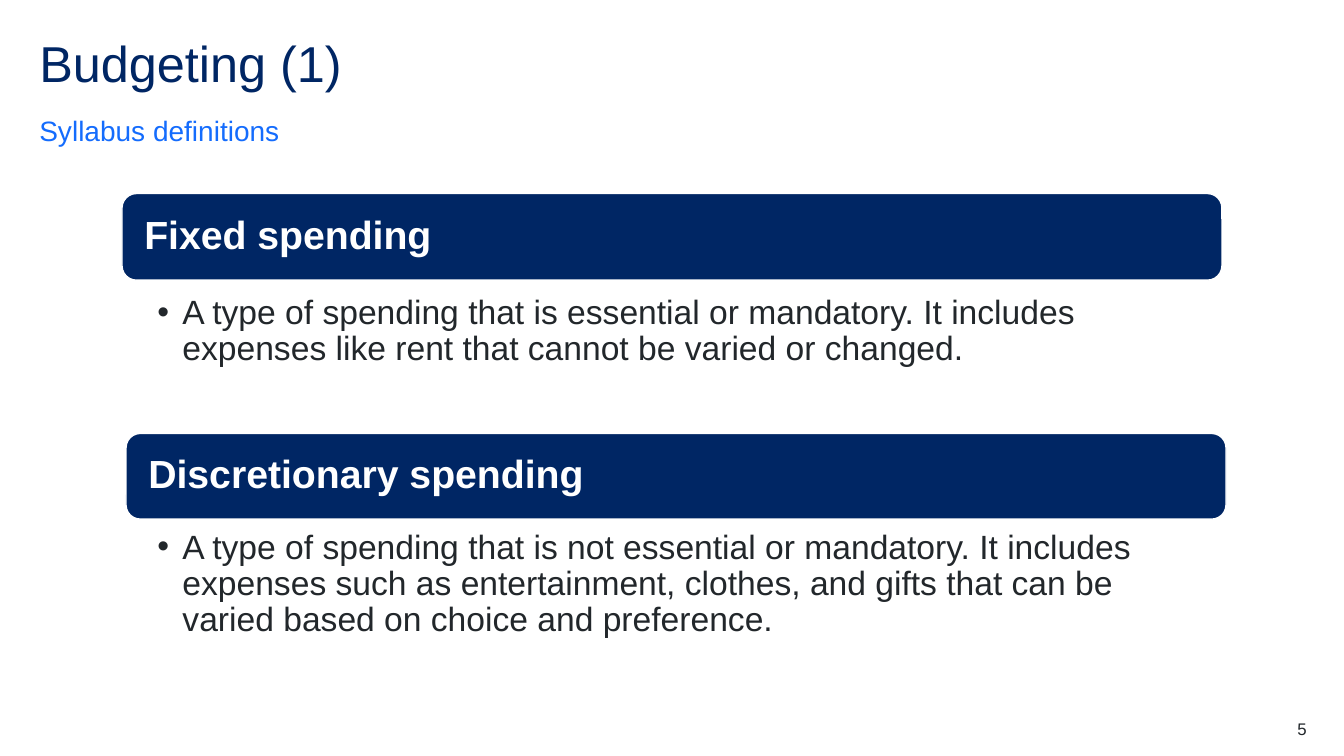
from dataclasses import dataclass

from lxml.etree import SubElement
from pptx import Presentation
from pptx.dml.color import RGBColor
from pptx.enum.shapes import MSO_SHAPE as Preset
from pptx.enum.text import MSO_ANCHOR as Anchor, PP_ALIGN as Align
from pptx.oxml.ns import qn
from pptx.util import Emu, Pt

EMU_PER_PX = 9144
FONT = "Arial"
NAVY, BLUE, INK, WHITE = "002664", "146CFD", "22272B", "FFFFFF"


@dataclass(frozen=True)
class Area:
    left: int
    top: int
    width: int
    height: int


@dataclass(frozen=True)
class Definition:
    term: str
    meaning: str
    term_area: Area
    meaning_area: Area


DEFINITIONS = [
    Definition(
        "Fixed spending",
        "A type of spending that is essential or mandatory. It includes "
        "expenses like rent that cannot be varied or changed.",
        Area(121, 192, 1091, 86),
        Area(121, 290, 1091, 118),
    ),
    Definition(
        "Discretionary spending",
        "A type of spending that is not essential or mandatory. It includes "
        "expenses such as entertainment, clothes, and gifts that can be "
        "varied based on choice and preference.",
        Area(125, 430, 1091, 85),
        Area(121, 523, 1091, 129),
    ),
]


def px(length: int) -> Emu:
    """Turn a length in px into EMU."""
    return Emu(length * EMU_PER_PX)


def color(value: str) -> RGBColor:
    """Turn a hex string into a colour."""
    return RGBColor.from_string(value)


def place(area: Area) -> tuple[Emu, Emu, Emu, Emu]:
    """Give the position and size of an area in EMU."""
    return px(area.left), px(area.top), px(area.width), px(area.height)


def write(box, text: str, *, size: int, ink: str, bold: bool = False,
          align: Align = Align.LEFT, anchor: Anchor = Anchor.TOP,
          spacing: float = 1.0, after: int = 0, bullet: bool = False,
          insets: tuple[int, int, int, int] = (0, 0, 0, 0)) -> None:
    """Write one formatted paragraph into a box."""
    frame = box.text_frame
    frame.word_wrap = True
    frame.vertical_anchor = anchor
    (frame.margin_left, frame.margin_top,
     frame.margin_right, frame.margin_bottom) = map(px, insets)
    para = frame.paragraphs[0]
    para.alignment = align
    para.line_spacing = spacing
    para.space_after = Pt(after)
    if bullet:
        para.level = 1
        properties = para._p.get_or_add_pPr()
        properties.set("marL", str(px(25)))
        properties.set("indent", str(px(-25)))
        SubElement(properties, qn("a:buFont"), typeface=FONT)
        SubElement(properties, qn("a:buChar"), char="•")
    span = para.add_run()
    span.text = text
    span.font.name = FONT
    span.font.size = Pt(size)
    span.font.bold = bold
    span.font.color.rgb = color(ink)


def add_text(page, area: Area, text: str, **style) -> None:
    """Add a text box with formatted text."""
    write(page.shapes.add_textbox(*place(area)), text, **style)


def add_panel(page, area: Area):
    """Add a clear rectangular outline that holds text."""
    right, bottom = area.left + area.width, area.top + area.height
    builder = page.shapes.build_freeform(area.left, area.top, scale=EMU_PER_PX)
    builder.add_line_segments(
        [(right, area.top), (right, bottom), (area.left, bottom)], close=True)
    panel = builder.convert_to_shape()
    panel.shadow.inherit = False
    panel.fill.background()
    panel.line.fill.background()
    return panel


def add_definition(page, item: Definition) -> None:
    """Draw the term on a rounded bar with its meaning below."""
    bar = page.shapes.add_shape(Preset.ROUNDED_RECTANGLE, *place(item.term_area))
    bar.shadow.inherit = False
    bar.fill.solid()
    bar.fill.fore_color.rgb = color(NAVY)
    bar.line.color.rgb = color(WHITE)
    bar.line.width = Pt(1)
    write(bar, item.term, size=28, ink=WHITE, bold=True, spacing=0.9,
          anchor=Anchor.MIDDLE, insets=(18, 18, 18, 18))
    write(add_panel(page, item.meaning_area), item.meaning, size=24, ink=INK,
          spacing=0.9, bullet=True, insets=(35, 3, 19, 3))


def main() -> None:
    """Build the slide and save the deck."""
    deck = Presentation()
    deck.slide_width, deck.slide_height = px(1333), px(750)
    page = deck.slides.add_slide(deck.slide_layouts[6])
    add_text(page, Area(39, 39, 1256, 60), "Budgeting (1)",
             size=36, ink=NAVY, spacing=0.9)
    add_text(page, Area(39, 107, 1256, 39), "Syllabus definitions",
             size=20, ink=BLUE, spacing=1.5, after=12, anchor=Anchor.BOTTOM)
    for item in DEFINITIONS:
        add_definition(page, item)
    add_text(page, Area(1217, 713, 79, 20), "5",
             size=12, ink=INK, align=Align.RIGHT)
    deck.save("out.pptx")


if __name__ == "__main__":
    main()
